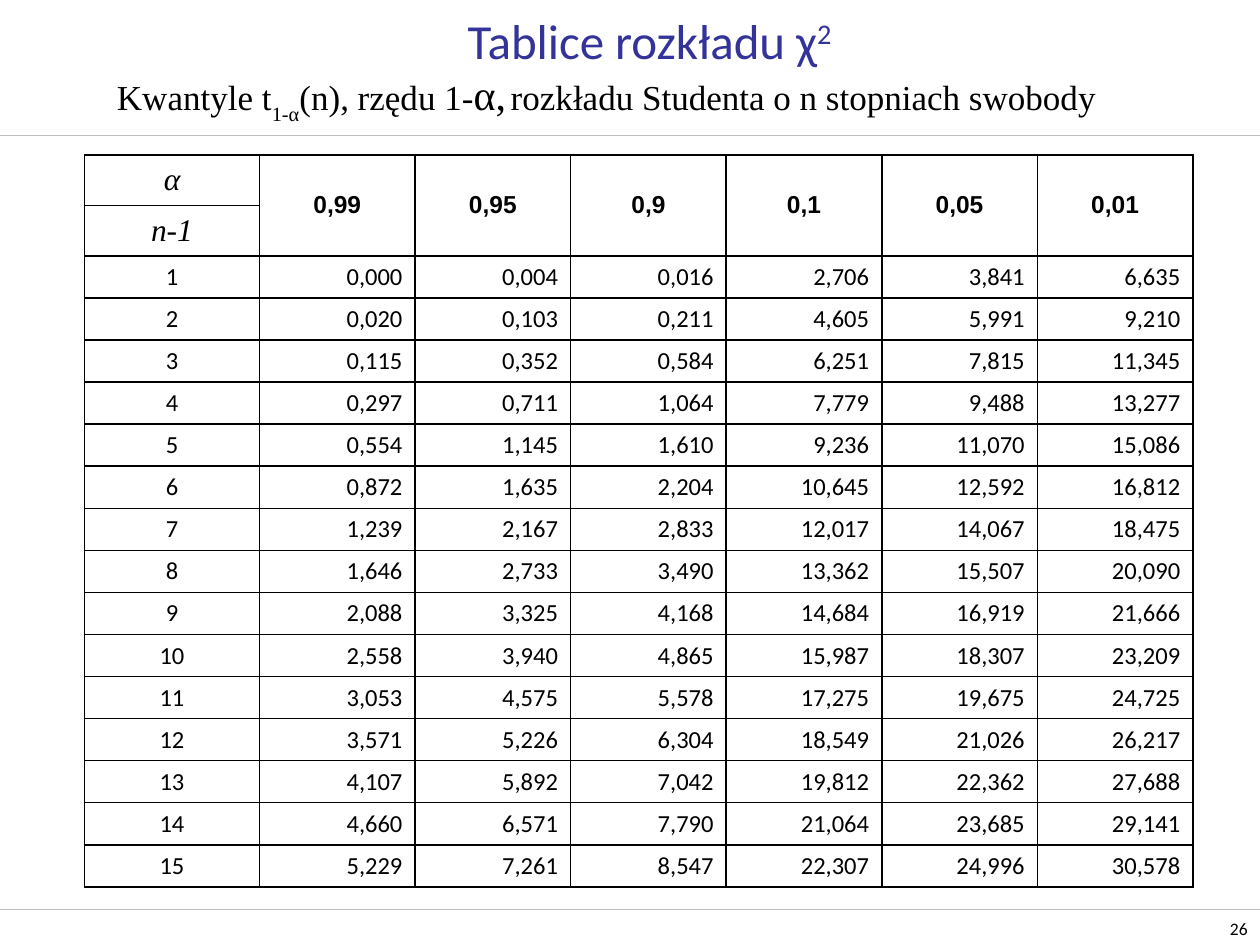
import pptx
import pptx.dml.color
import pptx.enum.shapes
import pptx.enum.text
import pptx.oxml.ns
import pptx.util
from lxml import etree

ALIGN = pptx.enum.text.PP_ALIGN
ANCHOR = pptx.enum.text.MSO_ANCHOR
INCHES = pptx.util.Inches

WIDTH, HEIGHT = 10, 7.5
BLACK, BLUE, SILVER = "000000", "333399", "C0C0C0"
RULES = (1.07, 7.22)

PAGE_NUMBER = [("26", 10, 0)]
TITLE = [("Tablice rozkładu χ", 28, 0), ("2", 28, 30)]
SUBTITLE = [
    ("Kwantyle t", 20, 0),
    ("1-α", 20, -30),
    ("(n), rzędu 1-", 20, 0),
    ("α,", 24, 0),
    (" ", 18, -30),
    ("rozkładu Studenta o n stopniach swobody", 20, 0),
]

CORNER = ("α", "n-1")
LEVELS = ("0,99", "0,95", "0,9", "0,1", "0,05", "0,01")
QUANTILES = [
    ("0,000", "0,004", "0,016", "2,706", "3,841", "6,635"),
    ("0,020", "0,103", "0,211", "4,605", "5,991", "9,210"),
    ("0,115", "0,352", "0,584", "6,251", "7,815", "11,345"),
    ("0,297", "0,711", "1,064", "7,779", "9,488", "13,277"),
    ("0,554", "1,145", "1,610", "9,236", "11,070", "15,086"),
    ("0,872", "1,635", "2,204", "10,645", "12,592", "16,812"),
    ("1,239", "2,167", "2,833", "12,017", "14,067", "18,475"),
    ("1,646", "2,733", "3,490", "13,362", "15,507", "20,090"),
    ("2,088", "3,325", "4,168", "14,684", "16,919", "21,666"),
    ("2,558", "3,940", "4,865", "15,987", "18,307", "23,209"),
    ("3,053", "4,575", "5,578", "17,275", "19,675", "24,725"),
    ("3,571", "5,226", "6,304", "18,549", "21,026", "26,217"),
    ("4,107", "5,892", "7,042", "19,812", "22,362", "27,688"),
    ("4,660", "6,571", "7,790", "21,064", "23,685", "29,141"),
    ("5,229", "7,261", "8,547", "22,307", "24,996", "30,578"),
]
TABLE_LEFT, TABLE_TOP, TABLE_WIDTH = 0.67, 1.23, 8.8
FIRST_COLUMN, HEADER_ROW, BODY_ROW = 1.39, 0.4, 0.33


def color(value):
    return pptx.dml.color.RGBColor.from_string(value)


def style_font(font, name, size, ink=BLACK, bold=False, italic=False):
    font.name = name
    font.size = pptx.util.Pt(size)
    font.color.rgb = color(ink)
    font.bold = bold
    font.italic = italic


def add_rule(slide, top):
    line = slide.shapes.add_connector(
        pptx.enum.shapes.MSO_CONNECTOR.STRAIGHT,
        0, INCHES(top), INCHES(WIDTH), INCHES(top))
    line.line.color.rgb = color(SILVER)
    line.line.width = pptx.util.Pt(0.25)
    etree.SubElement(line._element.spPr, pptx.oxml.ns.qn("a:effectLst"))


def add_text(slide, box, runs, name, ink, align, anchor):
    frame = slide.shapes.add_textbox(*map(INCHES, box)).text_frame
    frame.word_wrap = True
    frame.vertical_anchor = anchor
    paragraph = frame.paragraphs[0]
    paragraph.alignment = align
    for text, size, baseline in runs:
        run = paragraph.add_run()
        run.text = text
        style_font(run.font, name, size, ink)
        if baseline:
            run.font._element.set("baseline", str(baseline * 1000))


def set_borders(cell):
    properties = cell._tc.get_or_add_tcPr()
    for position, side in enumerate(("lnL", "lnR", "lnT", "lnB")):
        border = etree.Element(pptx.oxml.ns.qn("a:" + side), w="12700")
        fill = etree.SubElement(border, pptx.oxml.ns.qn("a:solidFill"))
        etree.SubElement(fill, pptx.oxml.ns.qn("a:srgbClr"), val=BLACK)
        properties.insert(position, border)


def fill_cell(cell, text, align, anchor, name, size, **emphasis):
    cell.text_frame.text = text
    cell.vertical_anchor = anchor
    paragraph = cell.text_frame.paragraphs[0]
    paragraph.alignment = align
    style_font(paragraph.runs[0].font, name, size, **emphasis)


def add_quantile_table(slide):
    header_count = len(CORNER)
    row_count, column_count = header_count + len(QUANTILES), 1 + len(LEVELS)
    heights = [HEADER_ROW] * header_count + [BODY_ROW] * len(QUANTILES)
    level_width = (TABLE_WIDTH - FIRST_COLUMN) / len(LEVELS)
    table = slide.shapes.add_table(
        row_count, column_count, INCHES(TABLE_LEFT), INCHES(TABLE_TOP),
        INCHES(TABLE_WIDTH), INCHES(sum(heights))).table
    table.first_row = table.horz_banding = False
    for row, height in zip(table.rows, heights):
        row.height = INCHES(height)
    for index, column in enumerate(table.columns):
        column.width = INCHES(level_width if index else FIRST_COLUMN)
    for cell in table.iter_cells():
        cell.fill.background()
        set_borders(cell)

    for row, text in enumerate(CORNER):
        fill_cell(table.cell(row, 0), text, ALIGN.CENTER, ANCHOR.MIDDLE,
                  "Times New Roman", 18, italic=True)
    for column, text in enumerate(LEVELS, 1):
        cell = table.cell(0, column)
        cell.merge(table.cell(header_count - 1, column))
        fill_cell(cell, text, ALIGN.CENTER, ANCHOR.MIDDLE, "Arial", 14, bold=True)
    for degree, values in enumerate(QUANTILES, 1):
        for column, text in enumerate((str(degree), *values)):
            fill_cell(table.cell(header_count - 1 + degree, column), text,
                      ALIGN.RIGHT if column else ALIGN.CENTER,
                      ANCHOR.BOTTOM, "Calibri", 14)


def main():
    presentation = pptx.Presentation()
    presentation.slide_width = INCHES(WIDTH)
    presentation.slide_height = INCHES(HEIGHT)
    slide = presentation.slides.add_slide(presentation.slide_layouts[6])
    for top in RULES:
        add_rule(slide, top)
    add_text(slide, (9.49, 7.22, 0.51, 0.28), PAGE_NUMBER, "Calibri", BLACK,
             ALIGN.RIGHT, ANCHOR.BOTTOM)
    add_text(slide, (1.06, 0, 8.19, 0.63), TITLE, "Calibri", BLUE,
             ALIGN.CENTER, ANCHOR.MIDDLE)
    add_quantile_table(slide)
    add_text(slide, (0.83, 0.52, 8.16, 0.5), SUBTITLE, "Times New Roman", BLACK,
             ALIGN.LEFT, ANCHOR.MIDDLE)
    presentation.save("out.pptx")


if __name__ == "__main__":
    main()
